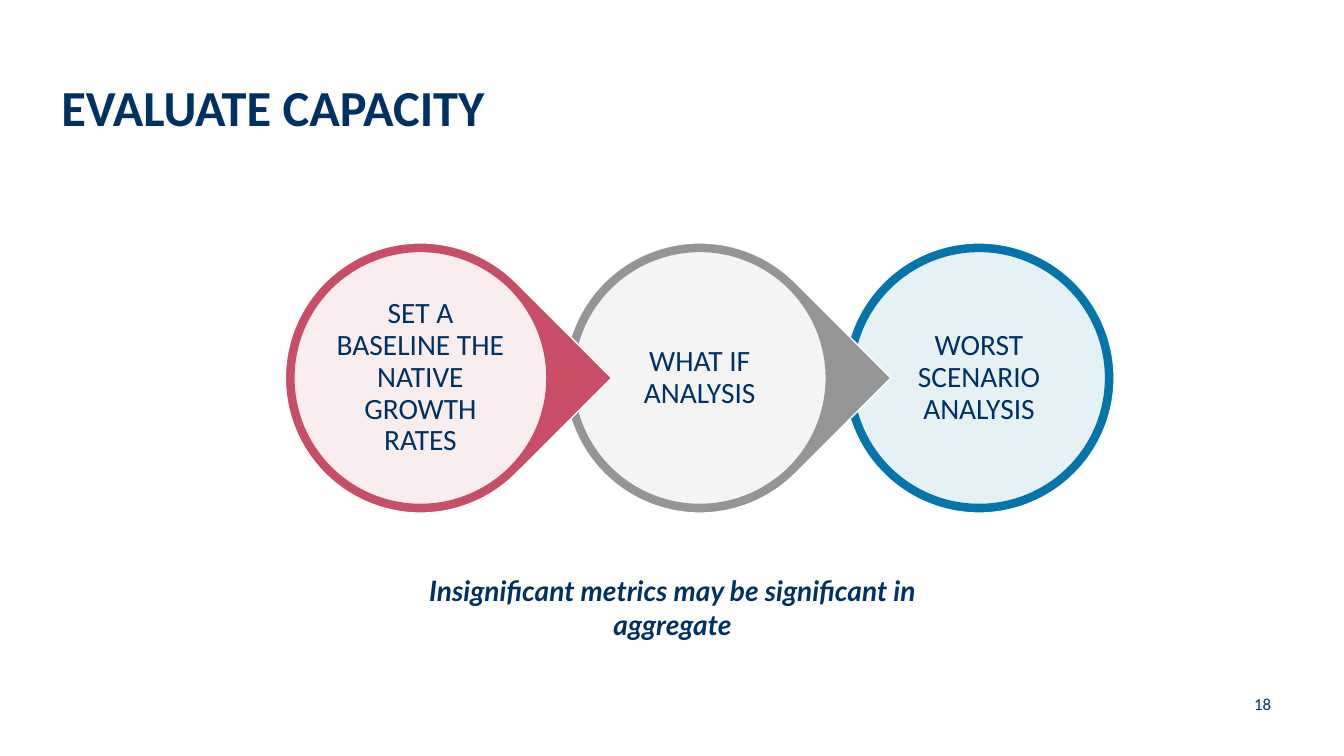
"""Build the capacity slide: three linked circles under a title."""
from lxml import etree
from pptx import Presentation
from pptx.dml.color import RGBColor
from pptx.enum.shapes import MSO_SHAPE
from pptx.enum.text import MSO_ANCHOR, PP_ALIGN
from pptx.oxml.ns import qn
from pptx.util import Inches, Pt

DROP, OVAL = MSO_SHAPE.TEAR, MSO_SHAPE.OVAL
TOP, MIDDLE, BOTTOM = MSO_ANCHOR.TOP, MSO_ANCHOR.MIDDLE, MSO_ANCHOR.BOTTOM
LEFT, CENTER = PP_ALIGN.LEFT, PP_ALIGN.CENTER
NAVY = "003165"


def tint(color, code):
    color.rgb = RGBColor.from_string(code)


def write(frame, text, anchor, align, look):
    frame.word_wrap = True
    frame.vertical_anchor = anchor
    par = frame.paragraphs[0]
    par.alignment = align
    run = par.add_run()
    run.text = text
    for name, value in look.items():
        setattr(run.font, name, value)
    tint(run.font.color, NAVY)


deck = Presentation()
deck.slide_width, deck.slide_height = Inches(13.33), Inches(7.5)
slide = deck.slides.add_slide(deck.slide_layouts[6])
shapes = slide.shapes

labels = [
    ("EVALUATE CAPACITY", (0.51, 0.14, 12.14, 1.26), BOTTOM, LEFT,
     {"name": "Calibri", "size": Pt(36), "bold": True}),
    ("Insignificant metrics may be significant in aggregate",
     (3.55, 5.64, 6.24, 0.44), TOP, CENTER,
     {"name": "Lato", "size": Pt(20), "bold": True, "italic": True}),
    ("18", (12.34, 6.86, 0.49, 0.25), MIDDLE, LEFT,
     {"name": "Calibri", "size": Pt(12)}),
]
for text, area, anchor, align, look in labels:
    box = shapes.add_textbox(*map(Inches, area))
    write(box.text_frame, text, anchor, align, look)

steps = [
    ("SET A BASELINE THE NATIVE GROWTH RATES", "C74E66", DROP),
    ("WHAT IF ANALYSIS", "939597", DROP),
    ("WORST SCENARIO ANALYSIS", "0375AB", OVAL),
]
first, pitch, outer, inner = 4.17, 2.77, 2.68, 2.51
mid = deck.slide_height / 2
for col, (text, code, kind) in reversed(list(enumerate(steps))):
    axis = Inches(first + col * pitch)
    rings = [(kind, outer, code, "FFFFFF"), (OVAL, inner, "FFFFFF", code)]
    for form, span, fill, edge in rings:
        side = Inches(span)
        disc = shapes.add_shape(
            form, int(axis - side / 2), int(mid - side / 2), side, side)
        disc.shadow.inherit = False
        disc.rotation = 45 if form == DROP else 0
        disc.fill.solid()
        tint(disc.fill.fore_color, fill)
        tint(disc.line.color, edge)
        disc.line.width = Pt(1)
    shade = disc.fill._xPr.find(qn("a:solidFill"))[0]
    etree.SubElement(shade, qn("a:alpha")).set("val", "90000")
    frame = disc.text_frame
    for edge in ("left", "right", "top", "bottom"):
        setattr(frame, "margin_" + edge, Inches(0.03))
    write(frame, text, MIDDLE, CENTER, {"name": "Calibri", "size": Pt(21)})
    frame.paragraphs[0].line_spacing = 0.9

deck.save("out.pptx")
